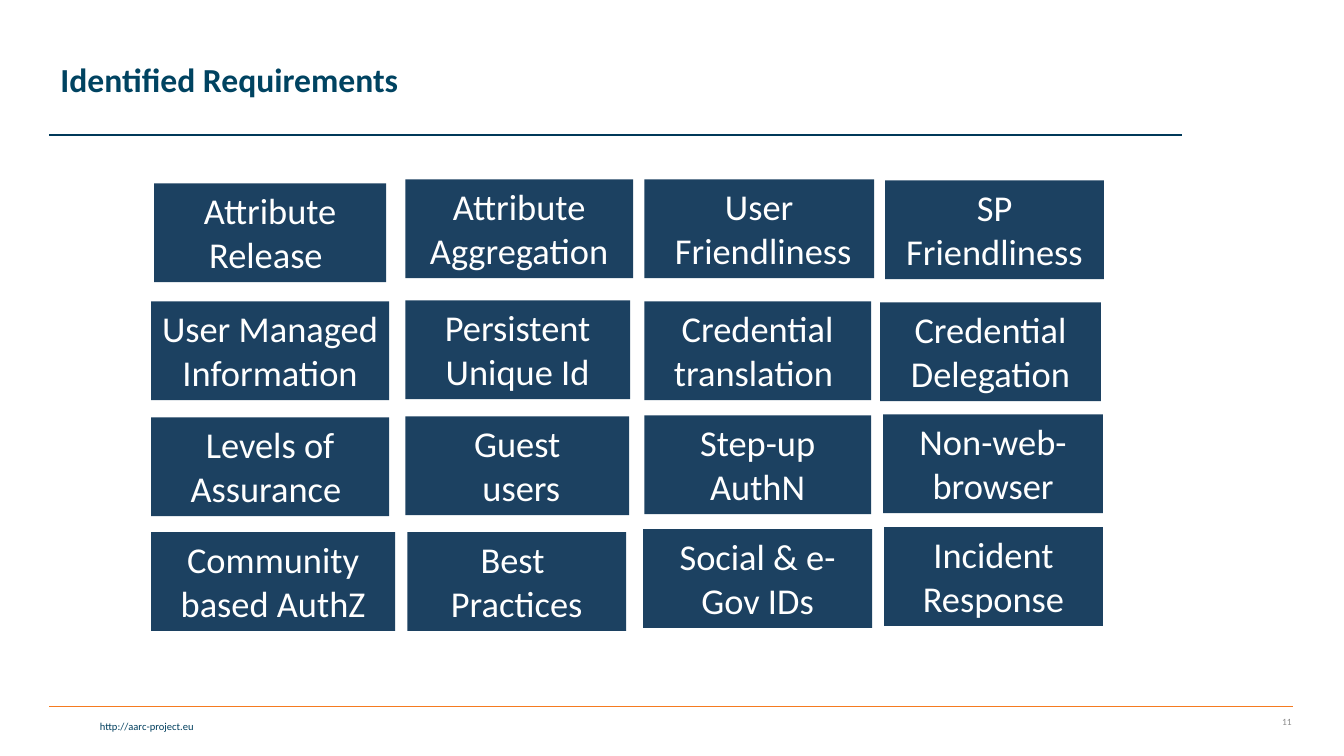
from pptx import Presentation
from pptx.dml.color import RGBColor
from pptx.enum.shapes import MSO_CONNECTOR, MSO_SHAPE
from pptx.enum.text import MSO_ANCHOR, PP_ALIGN
from pptx.oxml.ns import qn
from pptx.util import Inches, Pt
from lxml.etree import SubElement

COLORS = {
    "box": "1C4161",
    "box_text": "FFFFFF",
    "title": "004361",
    "title_rule": "003959",
    "footer_rule": "F57B20",
    "footer": "003F5E",
    "number": "8C8C8C",
}
BOX_HEIGHT = 0.98


def write(shape, text, size, color, align, anchor, bold=False):
    frame = shape.text_frame
    frame.word_wrap = True
    frame.vertical_anchor = anchor
    frame.text = text
    font_format = {"name": "Calibri", "size": Pt(size), "bold": bold}
    for paragraph in frame.paragraphs:
        paragraph.alignment = align
        for name, value in font_format.items():
            setattr(paragraph.font, name, value)
        paragraph.font.color.rgb = RGBColor.from_string(COLORS[color])


presentation = Presentation()
presentation.slide_width = Inches(13.33)
presentation.slide_height = Inches(7.5)
slide = presentation.slides.add_slide(presentation.slide_layouts[5])

title = slide.shapes.title
title_place = {"left": 0.5, "top": 0.08, "width": 10.51, "height": 1.45}
for name, value in title_place.items():
    setattr(title, name, Inches(value))
write(title, "Identified Requirements", 24, "title", PP_ALIGN.LEFT, MSO_ANCHOR.MIDDLE, True)
title.text_frame.paragraphs[0].line_spacing = 0.9

rules = [("footer_rule", 7.01, 12.82), ("title_rule", 1.34, 11.72)]
for color, top, right in rules:
    rule = slide.shapes.add_connector(
        MSO_CONNECTOR.STRAIGHT, Inches(0.49), Inches(top), Inches(right), Inches(top)
    )
    rule.line.color.rgb = RGBColor.from_string(COLORS[color])
    rule.line.width = Pt(1)
    SubElement(rule.element.spPr, qn("a:effectLst"))

footers = [
    ("http://aarc-project.eu", (0.03, 7.09, 1.99, 0.23), 7.5, "footer", MSO_ANCHOR.TOP),
    ("11", (12.1, 7.01, 0.81, 0.3), 6.8, "number", MSO_ANCHOR.MIDDLE),
]
for text, place, size, color, anchor in footers:
    footer = slide.shapes.add_textbox(*map(Inches, place))
    write(footer, text, size, color, PP_ALIGN.RIGHT, anchor)

requirement_rows = [
    [
        ("Attribute Release ", 1.53, 1.82, 2.3),
        ("Attribute Aggregation", 4.02, 1.78, 2.26),
        ("User\n Friendliness", 6.39, 1.78, 2.28),
        ("SP\nFriendliness", 8.78, 1.79, 2.17),
    ],
    [
        ("User Managed Information", 1.5, 2.99, 2.36),
        ("Persistent Unique Id", 4.02, 2.98, 2.23),
        ("Credential translation ", 6.39, 2.99, 2.25),
        ("Credential Delegation", 8.73, 3, 2.19),
    ],
    [
        ("Levels of Assurance ", 1.5, 4.14, 2.36),
        ("Guest\n users", 4.02, 4.13, 2.22),
        ("Step-up AuthN", 6.39, 4.12, 2.25),
        ("Non-web-browser", 8.76, 4.11, 2.18),
    ],
    [
        ("Community based AuthZ", 1.5, 5.28, 2.42),
        ("Best \nPractices", 4.04, 5.28, 2.17),
        ("Social & e-Gov IDs", 6.38, 5.25, 2.27),
        ("Incident Response", 8.77, 5.23, 2.17),
    ],
]
for row in requirement_rows:
    for text, left, top, width in row:
        box = slide.shapes.add_shape(
            MSO_SHAPE.RECTANGLE, Inches(left), Inches(top), Inches(width), Inches(BOX_HEIGHT)
        )
        box.shadow.inherit = False
        box.fill.solid()
        box.fill.fore_color.rgb = RGBColor.from_string(COLORS["box"])
        box.line.fill.background()
        write(box, text, 26, "box_text", PP_ALIGN.CENTER, MSO_ANCHOR.TOP)

presentation.save("out.pptx")
